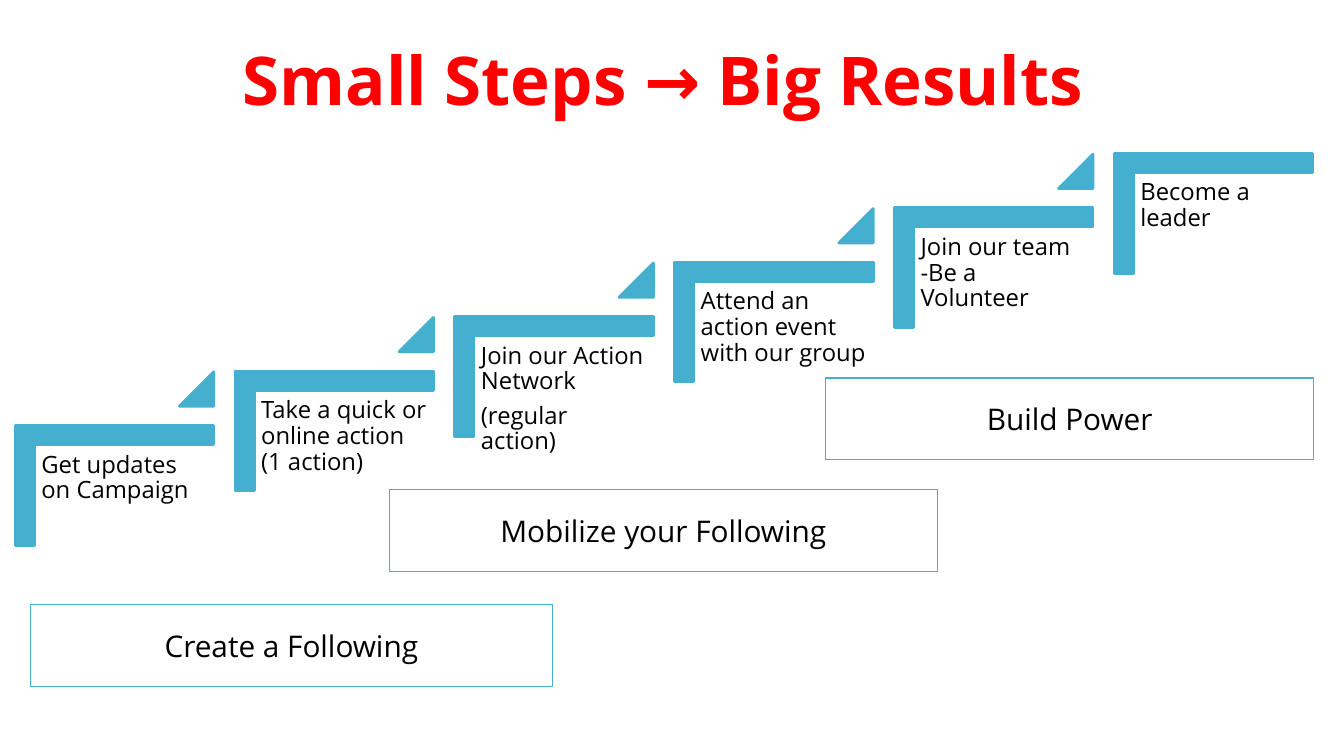
from pptx import Presentation
from pptx.dml.color import RGBColor
from pptx.enum.shapes import MSO_SHAPE as Shape
from pptx.enum.text import MSO_ANCHOR as Anchor, PP_ALIGN as Align
from pptx.util import Inches, Pt

COLORS = {"blue": "45AFD0", "red": "FF0000", "black": "000000"}
STEPS = [
    ["Get updates on Campaign"],
    ["Take a quick or online action (1 action)"],
    ["Join our Action Network", "(regular action)"],
    ["Attend an action event with our group"],
    ["Join our team -Be a Volunteer"],
    ["Become a leader"],
]
GOALS = [
    ("Create a Following", 0.3, 6, 5.18),
    ("Mobilize your Following", 3.86, 4.86, 5.44),
    ("Build Power", 8.19, 3.75, 4.84),
]
RUN, RISE = 2.18, 0.54

prs = Presentation()
prs.slide_width, prs.slide_height = Inches(13.33), Inches(7.5)
slide = prs.slides.add_slide(prs.slide_layouts[6])


def draw(kind, x, y, w, h, line, fill=None):
    shape = slide.shapes.add_shape(kind, Inches(x), Inches(y), Inches(w), Inches(h))
    shape.shadow.inherit = False
    shape.line.color.rgb = RGBColor.from_string(COLORS["blue"])
    shape.line.width = Pt(line)
    if fill:
        shape.fill.solid()
        shape.fill.fore_color.rgb = RGBColor.from_string(COLORS[fill])
    else:
        shape.fill.background()
    return shape


def write(shape, lines, size, pad, color="black", bold=False, center=True):
    frame = shape.text_frame
    frame.word_wrap = True
    frame.margin_left = frame.margin_right = Inches(pad)
    frame.margin_top = frame.margin_bottom = Inches(0.07)
    frame.vertical_anchor = Anchor.MIDDLE if center else Anchor.TOP
    frame.text = "\n".join(lines)
    for para in frame.paragraphs:
        para.alignment = Align.CENTER if center else Align.LEFT
        if not center:
            para.line_spacing = 0.9
            para.space_after = Pt(6)
        para.font.name = "Open Sans"
        para.font.size = Pt(size)
        para.font.bold = bold
        para.font.color.rgb = RGBColor.from_string(COLORS[color])


# Staircase
for i, lines in enumerate(STEPS):
    x, y = i * RUN, -i * RISE
    stair = draw(Shape.CORNER, 0.54 + x, 3.83 + y, 1.19, 1.97, 2, "blue")
    stair.rotation = 90
    stair.adjustments[0] = stair.adjustments[1] = 0.161
    label = slide.shapes.add_textbox(
        Inches(0.34 + x), Inches(4.42 + y), Inches(1.78), Inches(1.56))
    write(label, lines, 17, 0.07, center=False)
    if i < len(STEPS) - 1:
        wedge = draw(Shape.ISOSCELES_TRIANGLE, 1.78 + x, 3.69 + y, 0.34, 0.34, 2, "blue")
        wedge.adjustments[0] = 1

# Title
title = slide.shapes.add_textbox(Inches(0.84), Inches(0.37), Inches(11.48), Inches(0.81))
write(title, ["Small Steps → Big Results"], 48, 0.13, "red", True)

# Goals under the stairs
for text, x, y, w in GOALS:
    write(draw(Shape.RECTANGLE, x, y, w, 0.81, 0.75), [text], 21.3, 0.13)

prs.save("out.pptx")
